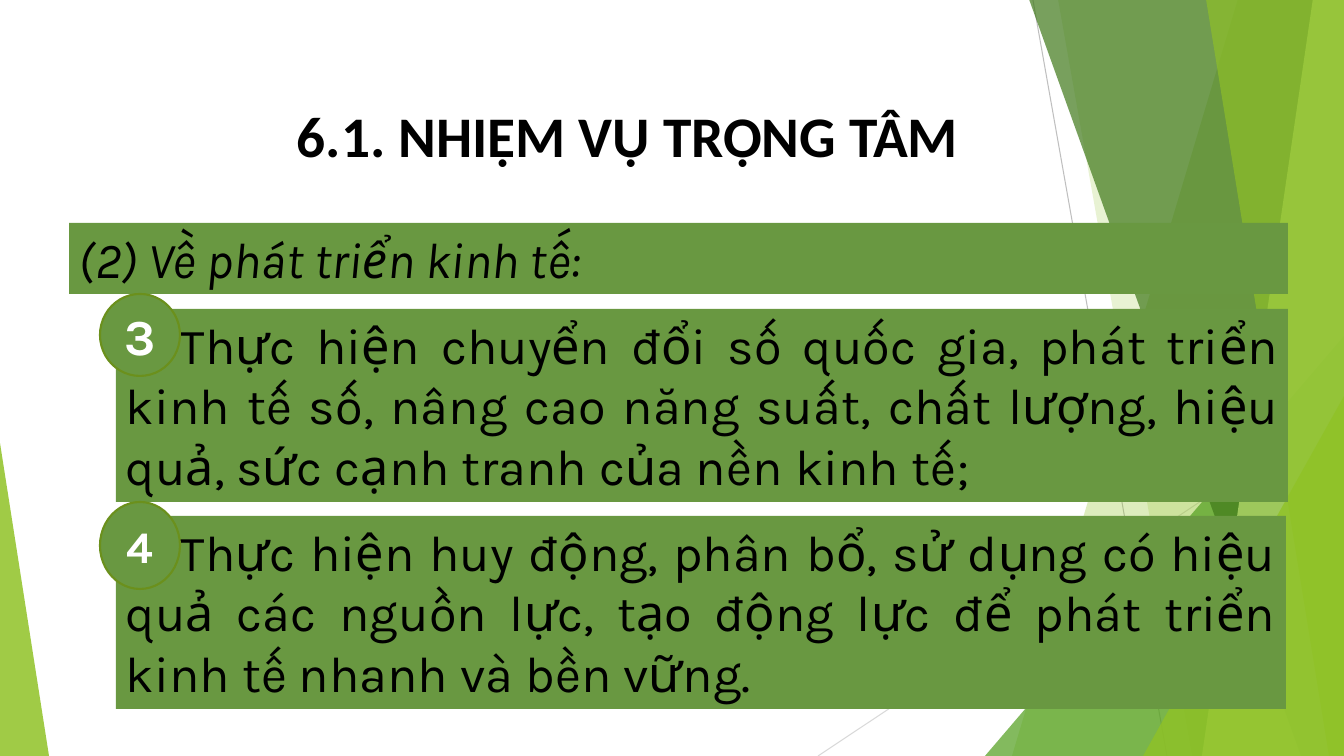
from lxml.etree import SubElement
from pptx import Presentation
from pptx.dml.color import RGBColor
from pptx.enum.shapes import MSO_CONNECTOR, MSO_SHAPE
from pptx.enum.text import MSO_ANCHOR, PP_ALIGN
from pptx.oxml.ns import qn
from pptx.util import Pt

W, H = 1344, 756
SCALE = 914400 / 100.8
COLORS = {
    "bar": "699841", "ring": "6B901C", "black": "000000", "white": "FFFFFF",
    "lime": "90C226", "leaf": "54A021", "forest": "3F7819", "pale": "C0E474",
    "gray": "BFBFBF", "silver": "D9D9D9",
}
TITLE = "6.1. NHIỆM VỤ TRỌNG TÂM"
HEADING = "(2) Về phát triển kinh tế:"
TASKS = [
    {"number": "3", "size": 36, "top": 309, "width": 1172, "badge": (294, 82),
     "text": "Thực hiện chuyển đổi số quốc gia, phát triển kinh tế số, nâng cao "
             "năng suất, chất lượng, hiệu quả, sức cạnh tranh của nền kinh tế;"},
    {"number": "4", "size": 32, "top": 516, "width": 1170, "badge": (502, 87),
     "text": "Thực hiện huy động, phân bổ, sử dụng có hiệu quả các nguồn lực, "
             "tạo động lực để phát triển kinh tế nhanh và bền vững."},
]
RAYS = [((1033, 0), (1167, H), "gray"), ((W, 406), (818, H), "silver")]
FACETS = [
    ("band", 1238, 1012, "lime", 30),
    ("band", 1058, 1192, "lime", 20),
    ("triangle", (985, 336, 359, 420), 1, "leaf", 72),
    ("band", 1029, 1301, "forest", 70),
    ("band", 1313, 1202, "pale", 70),
    ("band", 1206, 1329, "lime", 65),
    ("triangle", (1143, 396, 201, 360), 1, "lime", 80),
    ("triangle", (0, 443, 49, 313), 0, "lime", 85),
]


def px(*values):
    return [round(v * SCALE) for v in values]


def rgb(name):
    return RGBColor.from_string(COLORS[name])


def paint(sp, color, opacity=100, line=None):
    sp.shadow.inherit = False
    sp.fill.solid()
    sp.fill.fore_color.rgb = rgb(color)
    if opacity < 100:
        clr = sp.fill._xPr.find(qn("a:solidFill"))[0]
        SubElement(clr, qn("a:alpha"), val=str(opacity * 1000))
    if line:
        sp.line.color.rgb = rgb(line)
        sp.line.width = Pt(1.5)
    else:
        sp.line.fill.background()


def write(sp, text, size, align, anchor, color="black", font="Karla",
          bold=False, italic=False):
    tf = sp.text_frame
    tf.word_wrap = True
    tf.vertical_anchor = anchor
    tf.text = text
    p = tf.paragraphs[0]
    p.alignment = align
    f = p.runs[0].font
    f.name, f.size, f.bold, f.italic = font, Pt(size), bold, italic
    f.color.rgb = rgb(color)
    return p


def add_ray(s, start, end, color):
    ray = s.shapes.add_connector(MSO_CONNECTOR.STRAIGHT, *px(*start, *end))
    ray.line.color.rgb = rgb(color)
    ray.line.width = Pt(0.75)
    SubElement(ray._element.spPr, qn("a:effectLst"))


def add_facet(s, kind, place, shift, color, opacity):
    if kind == "band":
        fb = s.shapes.build_freeform(place, -1, scale=SCALE)
        fb.add_line_segments([(W, -1), (W, H), (shift, H)], close=True)
        sp = fb.convert_to_shape()
    else:
        sp = s.shapes.add_shape(MSO_SHAPE.ISOSCELES_TRIANGLE, *px(*place))
        sp.adjustments[0] = shift
    paint(sp, color, opacity)


def add_bar(s, box, text, italic=False):
    sp = s.shapes.add_shape(MSO_SHAPE.RECTANGLE, *px(*box))
    paint(sp, "bar")
    return write(sp, text, 36, PP_ALIGN.JUSTIFY, MSO_ANCHOR.TOP, italic=italic)


def add_task(s, task):
    p = add_bar(s, (116, task["top"], task["width"], 193), "\t" + task["text"])
    tabs = SubElement(p._p.get_or_add_pPr(), qn("a:tabLst"))
    SubElement(tabs, qn("a:tab"), pos=str(px(54)[0]), algn="l")


def add_badge(s, task):
    top, height = task["badge"]
    sp = s.shapes.add_shape(MSO_SHAPE.OVAL, *px(100, top, 80, height))
    paint(sp, "bar", line="ring")
    write(sp, task["number"], task["size"], PP_ALIGN.CENTER, MSO_ANCHOR.MIDDLE,
          color="white", bold=True)


def main():
    prs = Presentation()
    prs.slide_width, prs.slide_height = px(W, H)
    s = prs.slides.add_slide(prs.slide_layouts[5])
    for ray in RAYS:
        add_ray(s, *ray)
    for facet in FACETS:
        add_facet(s, *facet)
    title = s.shapes.title
    title.left, title.top, title.width, title.height = px(69, 79, 1118, 111)
    write(title, TITLE, 41, PP_ALIGN.CENTER, MSO_ANCHOR.MIDDLE,
          font="Calibri", bold=True)
    add_bar(s, (69, 223, 1219, 71), HEADING, italic=True)
    for task in TASKS:
        add_task(s, task)
    for task in TASKS:
        add_badge(s, task)
    prs.save("out.pptx")


if __name__ == "__main__":
    main()
